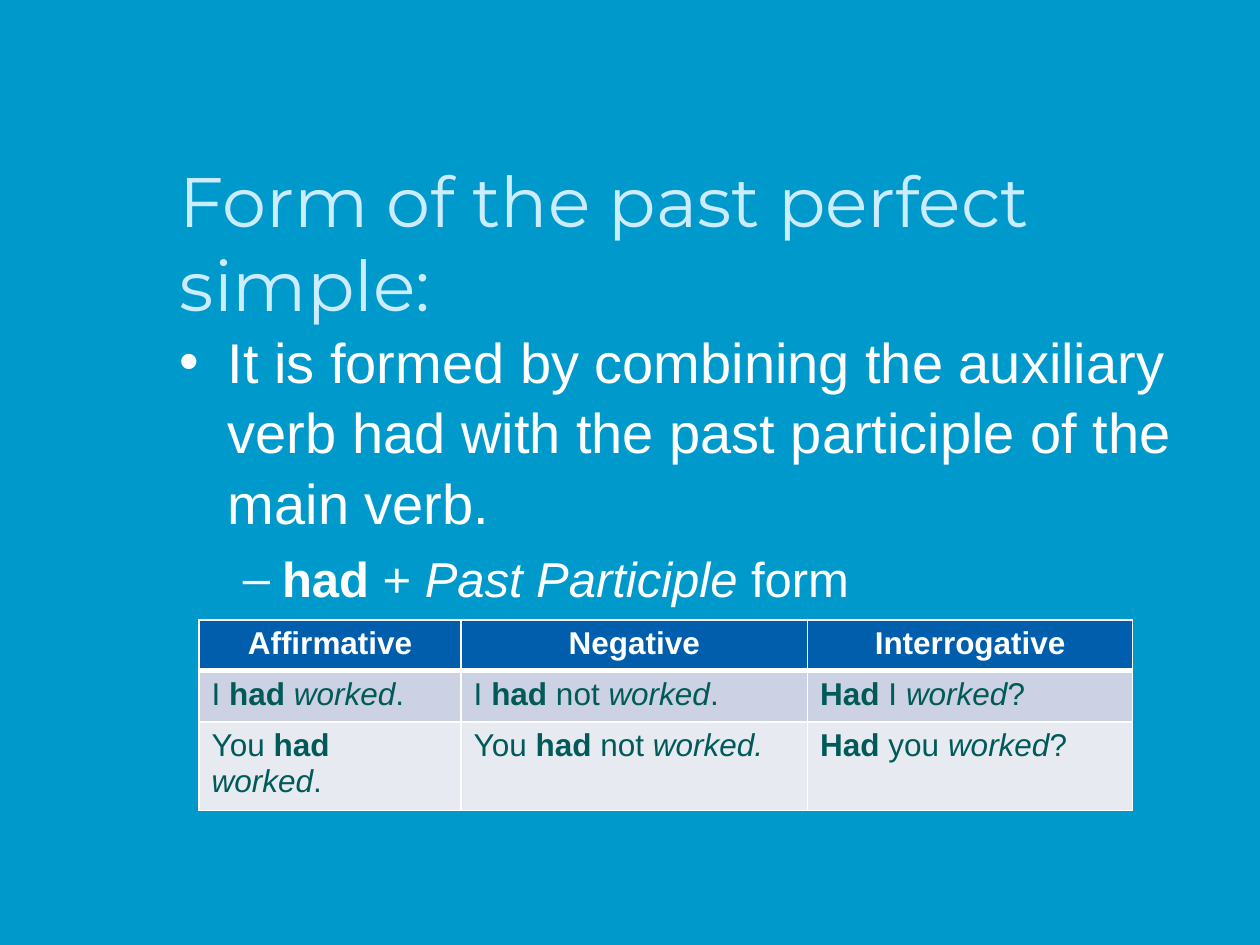
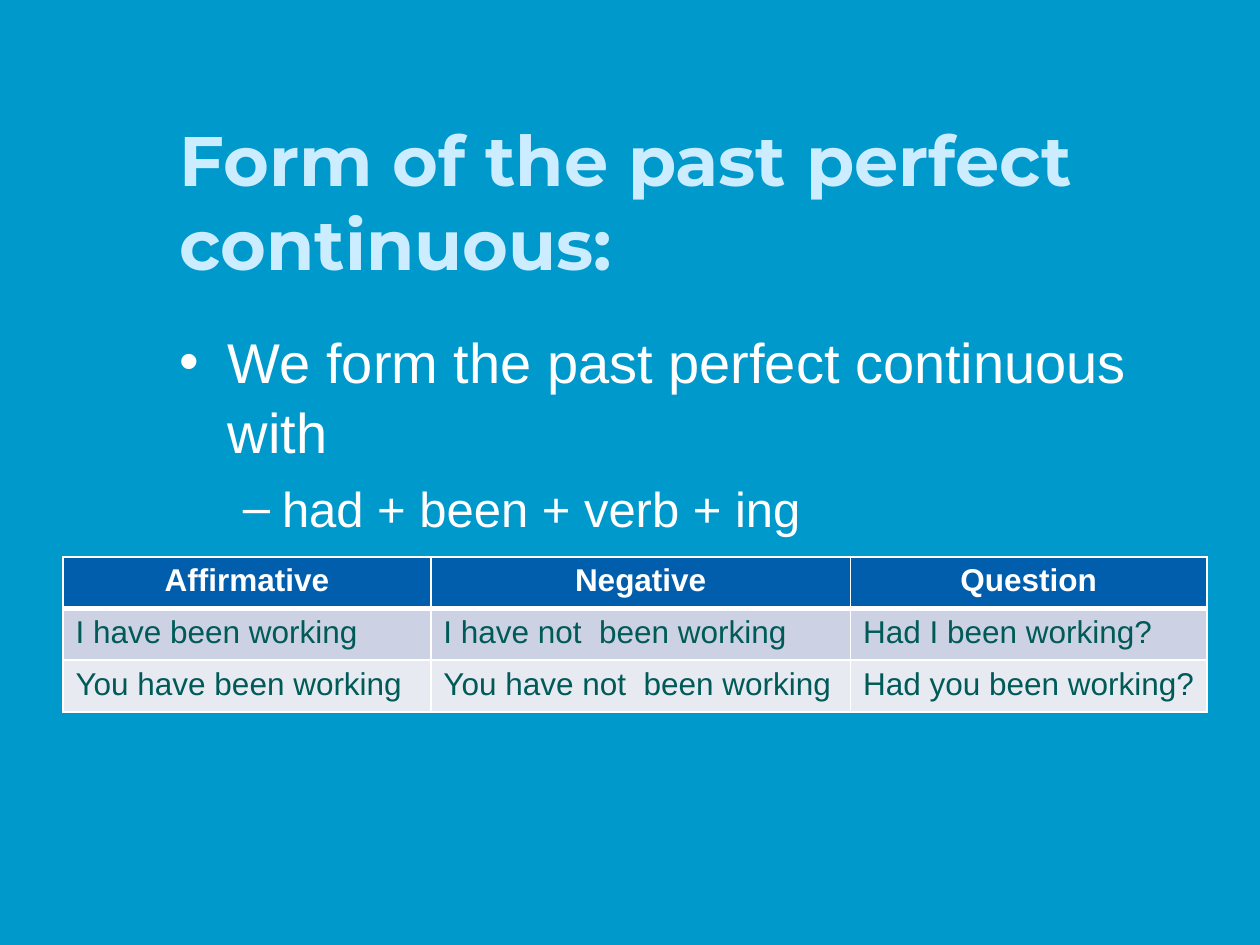
from lxml import etree
from pptx import Presentation
from pptx.dml.color import RGBColor
from pptx.enum.text import MSO_ANCHOR, PP_ALIGN
from pptx.oxml.ns import qn
from pptx.util import Inches, Pt

MIDDLE, TOP = MSO_ANCHOR.MIDDLE, MSO_ANCHOR.TOP
LEFT, CENTER = PP_ALIGN.LEFT, PP_ALIGN.CENTER

COLORS = {
    "page": "0099CC", "title": "CCECFF", "white": "FFFFFF", "header": "005EAC",
    "cell": "005A58", "odd": "CCD2E3", "even": "E7EAF1",
}
TITLE_FONT, BODY_FONT = "Montserrat", "Arial"
TITLE_BOX = (1.33, 1.42, 8.42, 1)
BODY_BOX = (1.33, 2.5, 8.42, 4.33)
# Bullet, size, left margin, hanging indent and space before, by level
LEVELS = [("•", 32, 0.38, -0.38, 0), ("–", 28, 0.81, -0.31, 6)]


def color(name):
    return RGBColor.from_string(COLORS[name])


def add_spans(para, spans, size, font, color_name):
    """Add (text, style) spans; the style holds b for bold, i for italic."""
    for text, style in spans:
        span = para.add_run()
        span.text = text
        span.font.size = Pt(size)
        span.font.name = font
        span.font.bold = "b" in style
        span.font.italic = "i" in style
        span.font.color.rgb = color(color_name)


def add_frame(page, box, anchor):
    frame = page.shapes.add_textbox(*map(Inches, box)).text_frame
    frame.word_wrap = True
    frame.vertical_anchor = anchor
    return frame


def add_title(page, box, spans, raised):
    frame = add_frame(page, box, MIDDLE)
    frame.margin_bottom = Inches(0.05 + 2 * raised)
    add_spans(frame.paragraphs[0], spans, 40, TITLE_FONT, "title")


def add_bullets(page, box, items):
    """Each item goes one level deeper than the one before."""
    frame = add_frame(page, box, TOP)
    frame.margin_top = Inches(0.07)
    for level, (spans, (bullet, size, margin, indent, before)) in enumerate(zip(items, LEVELS)):
        para = frame.add_paragraph() if level else frame.paragraphs[0]
        para.level = level
        properties = para._p.get_or_add_pPr()
        properties.set("marL", str(Inches(margin)))
        properties.set("indent", str(Inches(indent)))
        etree.SubElement(properties, qn("a:buFont"), typeface=BODY_FONT)
        etree.SubElement(properties, qn("a:buChar"), char=bullet)
        para.line_spacing = 1.05
        para.space_before = Pt(before)
        add_spans(para, spans, size, BODY_FONT, "white")


def add_borders(cell, row):
    properties = cell._tc.get_or_add_tcPr()
    widths = {"L": 1, "R": 1, "T": 3 if row == 1 else 1, "B": 3 if row == 0 else 1}
    for side, width in widths.items():
        line = etree.SubElement(properties, qn(f"a:ln{side}"), w=str(Pt(width)))
        fill = etree.SubElement(line, qn("a:solidFill"))
        etree.SubElement(fill, qn("a:srgbClr"), val=COLORS["white"])


def add_forms_table(page, box, widths, heights, headings, rows):
    cells = [[[(heading, "b")] for heading in headings]] + rows
    table = page.shapes.add_table(len(cells), len(widths), *map(Inches, box)).table
    table.first_row = table.horz_banding = False
    for column, width in zip(table.columns, widths):
        column.width = Inches(width)
    for row, line in enumerate(cells):
        table.rows[row].height = Inches(heights[row])
        for column, spans in enumerate(line):
            cell = table.cell(row, column)
            add_borders(cell, row)
            cell.fill.solid()
            cell.fill.fore_color.rgb = color(("header", "odd", "even")[row])
            para = cell.text_frame.paragraphs[0]
            para.alignment = LEFT if row else CENTER
            add_spans(para, spans, 18, BODY_FONT, "cell" if row else "white")


def add_form_page(deck, title, bullets, table, raised=0):
    page = deck.slides.add_slide(deck.slide_layouts[6])
    page.background.fill.solid()
    page.background.fill.fore_color.rgb = color("page")
    add_title(page, TITLE_BOX, title, raised)
    add_bullets(page, BODY_BOX, bullets)
    add_forms_table(page, **table)


def main():
    deck = Presentation()
    deck.slide_width, deck.slide_height = Inches(10), Inches(7.5)

    # Past perfect simple
    add_form_page(
        deck,
        [("Form of the past perfect simple:", "")],
        [
            [("It is formed by combining the auxiliary verb had with the past "
              "participle of the main verb.", "")],
            [("had", "b"), (" + ", ""), ("Past Participle ", "i"), ("form", "")],
        ],
        {
            "box": (1.58, 4.92, 7.42, 1.21),
            "widths": (2.08, 2.75, 2.58),
            "heights": (0.39, 0.41, 0.41),
            "headings": ("Affirmative", "Negative", "Interrogative"),
            "rows": [
                [
                    [("I ", ""), ("had ", "b"), ("worked", "i"), (".", "")],
                    [("I ", ""), ("had ", "b"), ("not ", ""), ("worked", "i"), (".", "")],
                    [("Had", "b"), (" I ", ""), ("worked", "i"), ("?", "")],
                ],
                [
                    [("You ", ""), ("had ", "b"), ("worked", "i"), (".", "")],
                    [("You ", ""), ("had", "b"), (" not ", ""), ("worked.", "i")],
                    [("Had ", "b"), ("you ", ""), ("worked", "i"), ("?", "")],
                ],
            ],
        },
    )

    # Past perfect continuous
    add_form_page(
        deck,
        [("Form of the past perfect continuous:", "b")],
        [
            [("We form the past perfect continuous with", "")],
            [("had + been + verb + ing", "")],
        ],
        {
            "box": (0.5, 4.42, 9.08, 1.23),
            "widths": (2.92, 3.33, 2.83),
            "heights": (0.41, 0.41, 0.41),
            "headings": ("Affirmative", "Negative", "Question"),
            "rows": [
                [[(f"{subject} have been working", "")],
                 [(f"{subject} have not  been working", "")],
                 [(f"Had {asked} been working?", "")]]
                for subject, asked in (("I", "I"), ("You", "you"))
            ],
        },
        raised=0.33,
    )
    deck.save("out.pptx")


if __name__ == "__main__":
    main()
